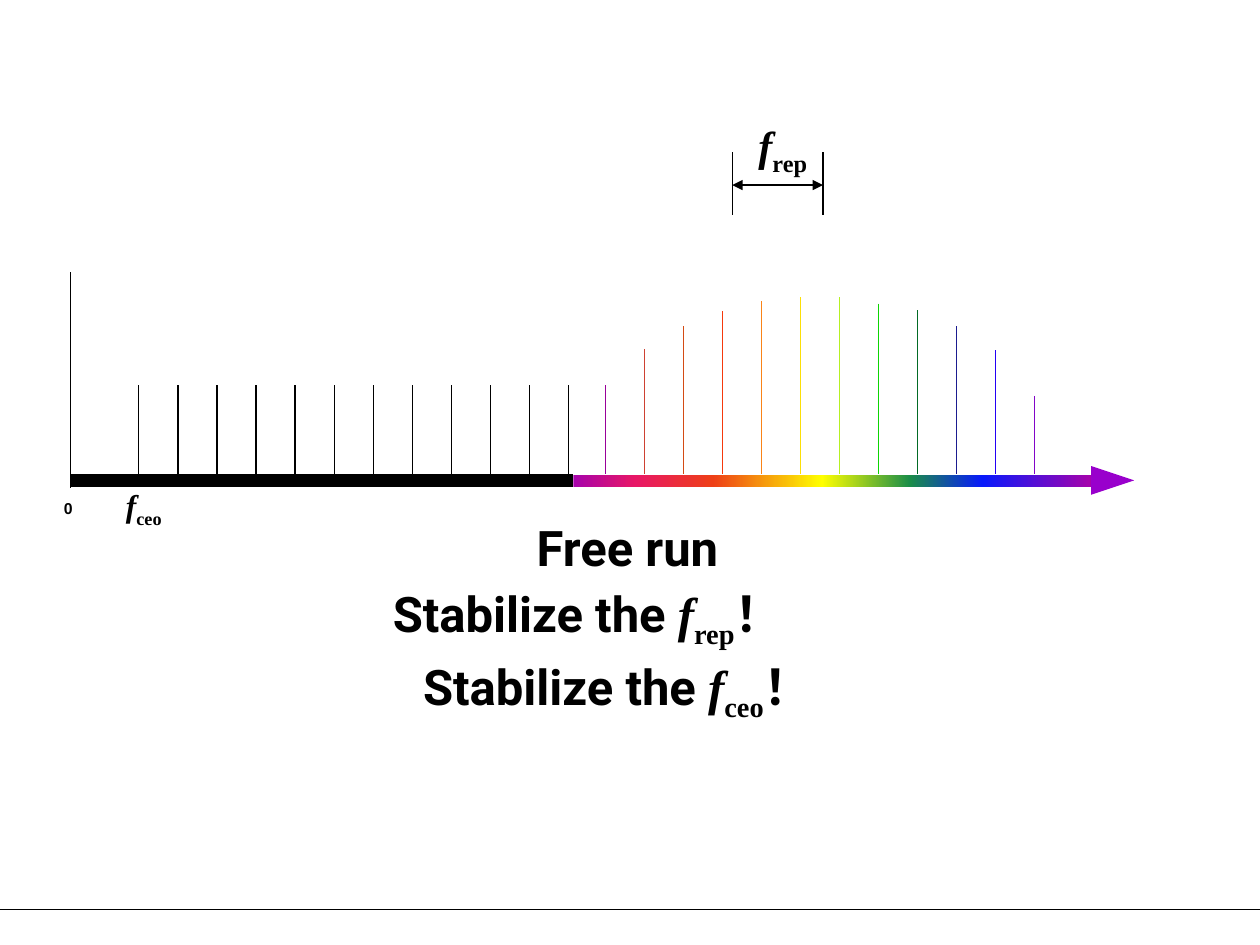
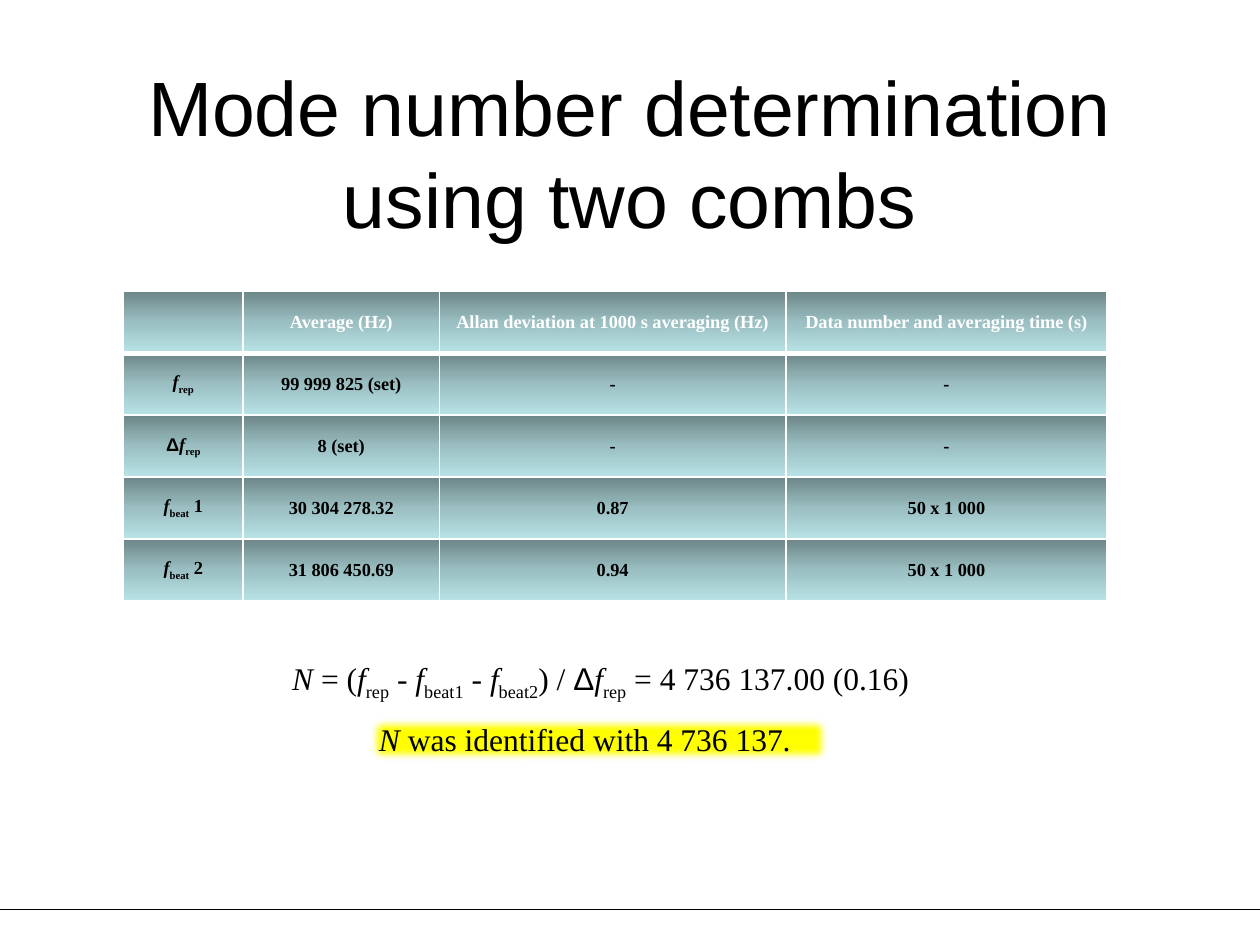
from dataclasses import dataclass

from lxml import etree
from pptx import Presentation
from pptx.dml.color import RGBColor
from pptx.enum.shapes import MSO_CONNECTOR, MSO_SHAPE
from pptx.enum.text import MSO_ANCHOR, MSO_AUTO_SIZE, PP_ALIGN
from pptx.oxml.ns import qn
from pptx.util import Cm, Pt

STRAIGHT = MSO_CONNECTOR.STRAIGHT
RECT, TRIANGLE = MSO_SHAPE.RECTANGLE, MSO_SHAPE.ISOSCELES_TRIANGLE
TOP, MIDDLE = MSO_ANCHOR.TOP, MSO_ANCHOR.MIDDLE
LEFT, CENTER = PP_ALIGN.LEFT, PP_ALIGN.CENTER
GROW = MSO_AUTO_SIZE.SHAPE_TO_FIT_TEXT


@dataclass(frozen=True)
class Theme:
    ink: str = "000000"
    paper: str = "FFFFFF"
    arrow: str = "9900CC"
    highlight: str = "FFFF00"
    spectrum: tuple = ((0, "A603AB"), (12, "E81766"), (27, "EE3F17"), (48, "FFFF00"),
                       (65, "1A8D48"), (79, "0819FB"), (100, "A603AB"))
    cell: tuple = ((0, "6D8688"), (50, "9BBFC2"), (100, "B8E3E6"))
    serif: str = "Times New Roman"
    sans: str = "Arial"
    heading: str = "Roboto"
    title: float = 44
    message: float = 28
    symbol: float = 24
    body: float = 18
    table: float = 10.5
    small: float = 9
    hairline: float = 0.75
    axis: float = 7.5


T = Theme()
WIDTH, HEIGHT = 25.4, 19.05
FOOTER_Y = 18.34

# Run styles: plain serif, italic, subscript, sans, heading
RUN_STYLES = {
    "": {"name": T.serif},
    "i": {"name": T.serif, "italic": True},
    "sub": {"name": T.serif},
    "sans": {"name": T.sans},
    "head": {"name": T.heading},
}


def f_sub(index):
    return [("f", "i"), (index, "sub")]


F_REP, F_CEO = f_sub("rep"), f_sub("ceo")
DELTA_F_REP = [("Δ", "sans")] + F_REP

# Slide 1: text, size, box
COMB_LABELS = [
    ([("0", "sans")], T.small, (1.04, 9.93, 0.69, 0.64)),
    (F_CEO, T.body, (2.29, 9.68, 1.32, 1.02)),
    ([("Free run", "head")], T.message, (10.57, 10.31, 4.7, 1.45)),
    ([("Stabilize the ", "head")] + F_REP + [("！", "")], T.message,
     (7.67, 11.63, 9.32, 1.45)),
    ([("Stabilize the ", "head")] + F_CEO + [("！", "sans")], T.message,
     (8.28, 13.11, 9.3, 1.45)),
    (F_REP, T.symbol, (15.04, 2.29, 1.6, 1.3)),
]
DARK_TEETH = [(7.77, T.ink)] * 12
COLOUR_TEETH = [
    (7.77, "990099"), (7.04, "CE4132"), (6.58, "D44B14"), (6.27, "F5390D"),
    (6.07, "FA8418"), (5.99, "FCDF06"), (5.99, "B5F022"), (6.12, "0DD503"),
    (6.25, "026A25"), (6.58, "1B1B8F"), (7.06, "2300F4"), (7.98, "8204C8"),
]
COMBS = [(2.8, DARK_TEETH), (12.2, COLOUR_TEETH)]
COMB_SPAN, TOOTH_FOOT = 8.66, 9.55
ORIGIN_X, AXIS_Y, SPECTRUM_X = 1.42, 9.68, 11.56
SPACING_MARKS = (14.76, 16.59)

# Slide 2
TITLE = "Mode number determination using two combs"
HEADER = ["", "Average (Hz)", "Allan deviation at 1000 s averaging (Hz)",
          "Data number and averaging time (s)"]
MEASUREMENTS = [
    (F_REP, "99 999 825 (set)", "-", "-"),
    (DELTA_F_REP, "8 (set)", "-", "-"),
    (f_sub("beat") + [(" 1", "")], "30 304 278.32", "0.87", "50 x 1 000"),
    (f_sub("beat") + [(" 2", "")], "31 806 450.69", "0.94", "50 x 1 000"),
]
COLUMNS, ROW_HEIGHT = (2.41, 3.96, 6.98, 6.48), 1.25
FORMULA = ([("N", "i"), (" = (", "")] + F_REP + [(" - ", "")] + f_sub("beat1")
           + [(" - ", "")] + f_sub("beat2") + [(") / ", "")] + DELTA_F_REP
           + [(" = 4 736 137.00 (0.16)", "")])
RESULT = [("N", "i"), (" was identified with 4 736 137.", "")]


def rgb(colour):
    return RGBColor.from_string(colour)


def write(tf, runs, size, color=T.ink, bold=False, align=LEFT):
    p = tf.paragraphs[0]
    p.alignment = align
    for text, style in runs:
        r = p.add_run()
        r.text = text
        for key, value in {"size": Pt(size), "bold": bold, **RUN_STYLES[style]}.items():
            setattr(r.font, key, value)
        r.font.color.rgb = rgb(color)
        if style == "sub":
            r.font._element.set("baseline", "-25000")


def add_text(s, runs, size, box, wrap=False, grow=True, anchor=TOP, **fmt):
    tf = s.shapes.add_textbox(*map(Cm, box)).text_frame
    tf.word_wrap = wrap
    tf.vertical_anchor = anchor
    if grow:
        tf.auto_size = GROW
    write(tf, runs, size, **fmt)


def add_line(s, x1, y1, x2, y2, color=T.ink, width=T.hairline, arrows=False):
    c = s.shapes.add_connector(STRAIGHT, *map(Cm, (x1, y1, x2, y2)))
    c.line.color.rgb = rgb(color)
    c.line.width = Pt(width)
    sp_pr = c._element.spPr
    if arrows:
        for end in ("a:headEnd", "a:tailEnd"):
            etree.SubElement(sp_pr.find(qn("a:ln")), qn(end), type="triangle")
    etree.SubElement(sp_pr, qn("a:effectLst"))


def add_block(s, kind, box, color=None):
    sp = s.shapes.add_shape(kind, *map(Cm, box))
    sp.shadow.inherit = False
    sp.line.fill.background()
    if color:
        sp.fill.solid()
        sp.fill.fore_color.rgb = rgb(color)
    return sp


def set_gradient(fill, element, stops, angle):
    """Fill with any number of (percent, colour) stops."""
    fill.gradient()
    fill.gradient_angle = angle
    gs_lst = element.find(".//" + qn("a:gsLst"))
    for gs in list(gs_lst):
        gs_lst.remove(gs)
    for percent, colour in stops:
        gs = etree.SubElement(gs_lst, qn("a:gs"), pos=str(percent * 1000))
        etree.SubElement(gs, qn("a:srgbClr"), val=colour)


def set_borders(cell, **widths):
    tc_pr = cell._tc.get_or_add_tcPr()
    for i, side in enumerate("LRTB"):
        ln = etree.Element(qn("a:ln" + side), w=str(Pt(widths.get(side, 1))))
        etree.SubElement(etree.SubElement(ln, qn("a:solidFill")),
                         qn("a:srgbClr"), val=T.paper)
        tc_pr.insert(i, ln)


def new_slide(prs):
    s = prs.slides.add_slide(prs.slide_layouts[6])
    add_line(s, 0, FOOTER_Y, WIDTH, FOOTER_Y)
    return s


def comb_slide(prs):
    s = new_slide(prs)
    add_line(s, ORIGIN_X, AXIS_Y, SPECTRUM_X, AXIS_Y, width=T.axis)
    band = add_block(s, RECT, (SPECTRUM_X, 9.57, 10.44, 0.25))
    set_gradient(band.fill, band._element, T.spectrum, 0)
    add_block(s, TRIANGLE, (22.14, 9.25, 0.58, 0.87), T.arrow).rotation = 90
    add_line(s, ORIGIN_X, 9.83, ORIGIN_X, 5.49)

    for start, teeth in COMBS:
        pitch = COMB_SPAN / (len(teeth) - 1)
        for i, (top, colour) in enumerate(teeth):
            x = start + i * pitch
            add_line(s, x, top, x, TOOTH_FOOT, colour)

    for runs, size, box in COMB_LABELS:
        add_text(s, runs, size, box, bold=True)

    left, right = SPACING_MARKS
    add_line(s, left, 3.73, right, 3.73, arrows=True)
    for x in SPACING_MARKS:
        add_line(s, x, 3.07, x, 4.34)


def add_measurement_table(s):
    rows = [HEADER, *MEASUREMENTS]
    frame = s.shapes.add_table(len(rows), len(COLUMNS), Cm(2.49), Cm(5.87),
                               Cm(sum(COLUMNS)), Cm(ROW_HEIGHT * len(rows)))
    table = frame.table
    table.first_row = table.horz_banding = False
    for column, width in zip(table.columns, COLUMNS):
        column.width = Cm(width)
    margins = {"margin_left": Cm(0.18), "margin_right": Cm(0.18),
               "margin_top": 0, "margin_bottom": 0, "vertical_anchor": MIDDLE}
    for i, row in enumerate(rows):
        table.rows[i].height = Cm(ROW_HEIGHT)
        for j, content in enumerate(row):
            cell = table.cell(i, j)
            for key, value in margins.items():
                setattr(cell, key, value)
            set_gradient(cell.fill, cell._tc, T.cell, 270)
            set_borders(cell, B=3 if i == 0 else 1, T=3 if i == 1 else 1)
            if content:
                runs = [(content, "")] if isinstance(content, str) else content
                write(cell.text_frame, runs, T.table, T.ink if i else T.paper,
                      bold=True, align=CENTER)


def mode_number_slide(prs):
    s = new_slide(prs)
    add_measurement_table(s)
    add_text(s, [(TITLE, "sans")], T.title, (1.27, 1.47, 22.86, 3.18),
             wrap=True, grow=False, anchor=MIDDLE, align=CENTER)
    add_text(s, FORMULA, T.body, (5.64, 13.16, 13.49, 1.02), wrap=True)

    result = add_block(s, RECT, (7.39, 14.4, 9.37, 1.02), T.highlight)
    etree.SubElement(result._element.spPr.find(qn("a:effectLst")),
                     qn("a:softEdge"), rad=str(Pt(5)))
    tf = result.text_frame
    tf.word_wrap, tf.auto_size, tf.vertical_anchor = True, GROW, TOP
    write(tf, RESULT, T.body)


def main():
    prs = Presentation()
    prs.slide_width, prs.slide_height = Cm(WIDTH), Cm(HEIGHT)
    comb_slide(prs)
    mode_number_slide(prs)
    prs.save("out.pptx")


if __name__ == "__main__":
    main()
